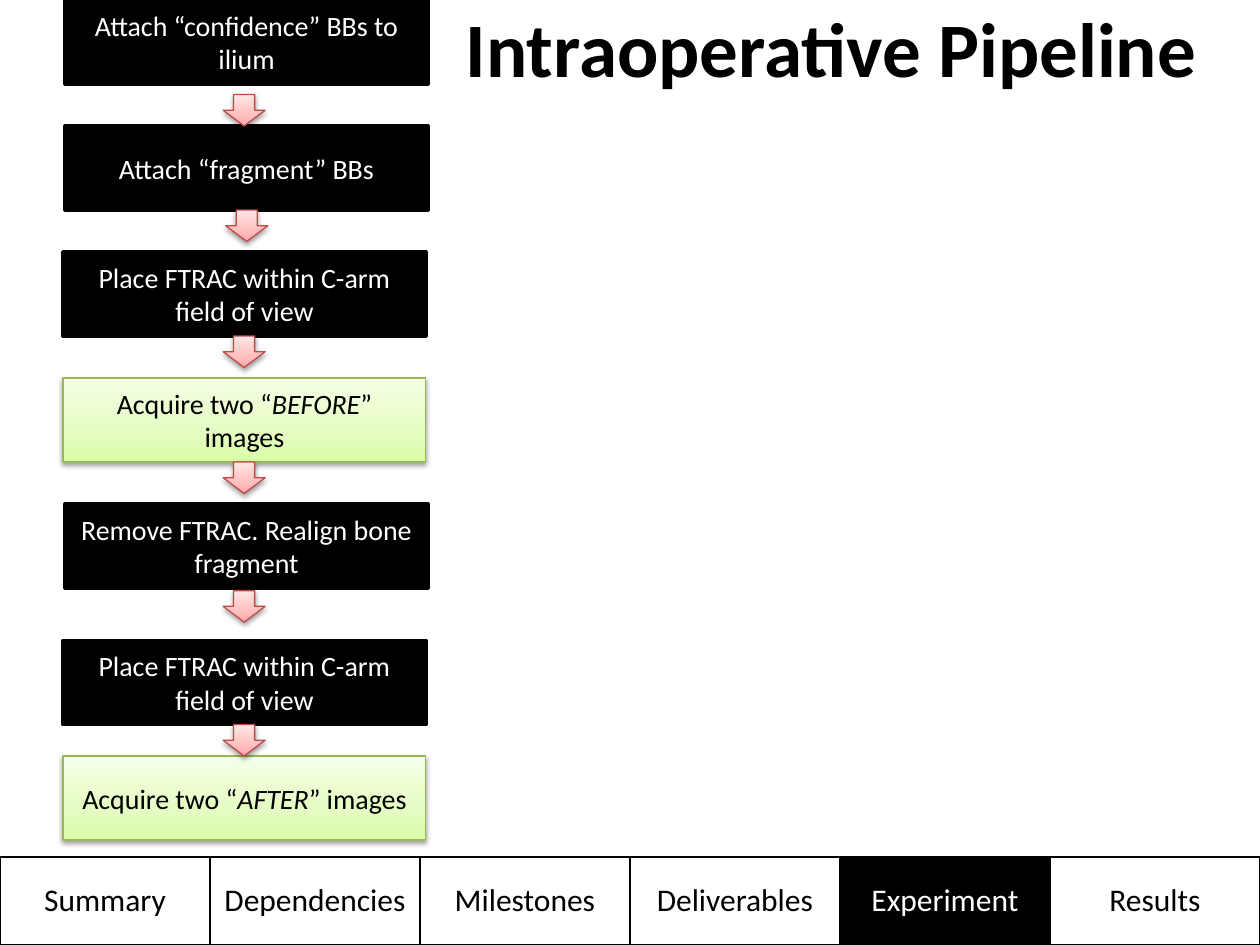
import copy

import pptx
import pptx.dml.color
import pptx.enum.shapes
import pptx.enum.text
import pptx.oxml
import pptx.oxml.ns
import pptx.util
from pptx.util import Pt

RECTANGLE = pptx.enum.shapes.MSO_SHAPE.RECTANGLE
DOWN_ARROW = pptx.enum.shapes.MSO_SHAPE.DOWN_ARROW
MIDDLE = pptx.enum.text.MSO_ANCHOR.MIDDLE
CENTER = pptx.enum.text.PP_ALIGN.CENTER
NAMESPACE = pptx.oxml.ns.nsdecls("a")


class Theme:
    font = "Calibri"
    black, white = "000000", "FFFFFF"
    green = ("DAFDA7", "E4FCC2", "F5FFE7")
    green_line = "98B955"
    red = ("FFA6A5", "FFC0BF", "FFE7E7")
    red_line = "BF4C48"
    stop_positions = (0, 0.35, 1)
    title_size, tab_size, step_size = 44, 18, 16


def rgb(value):
    return pptx.dml.color.RGBColor.from_string(value)


def set_values(target, values):
    for name, value in values.items():
        setattr(target, name, value)


class SlideBuilder:
    def __init__(self, slide, theme):
        self.slide, self.theme = slide, theme

    def add_text(self, frame, runs, size, color, **extra):
        """Fill the first paragraph with (text, font values) runs."""
        paragraph = frame.paragraphs[0]
        paragraph.alignment = CENTER
        for text, values in runs:
            run = paragraph.add_run()
            run.text = text
            set_values(run.font, {"name": self.theme.font, "size": Pt(size), **extra, **values})
            run.font.color.rgb = rgb(color)

    def shape(self, kind, left, top, width, height, fill, line, line_width):
        shape = self.slide.shapes.add_shape(kind, Pt(left), Pt(top), Pt(width), Pt(height))
        shape.shadow.inherit = False
        shape.line.color.rgb = rgb(line)
        shape.line.width = Pt(line_width)
        if isinstance(fill, tuple):
            self.gradient(shape, fill)
            self.shadow(shape)
        else:
            shape.fill.solid()
            shape.fill.fore_color.rgb = rgb(fill)
        return shape

    def gradient(self, shape, colors):
        shape.fill.gradient()
        shape.fill.gradient_angle = 90
        stop_list = shape._element.spPr.find(".//" + pptx.oxml.ns.qn("a:gsLst"))
        stop_list.insert(1, copy.deepcopy(stop_list[0]))
        for stop, position, color in zip(shape.fill.gradient_stops, self.theme.stop_positions, colors):
            stop.position = position
            stop.color.rgb = rgb(color)

    def shadow(self, shape):
        effects = shape._element.spPr.find(pptx.oxml.ns.qn("a:effectLst"))
        effects.append(pptx.oxml.parse_xml(
            f'<a:outerShdw {NAMESPACE} blurRad="{Pt(3.1)}" dist="{Pt(1.6)}" dir="5400000" '
            f'rotWithShape="0"><a:srgbClr val="{self.theme.black}"><a:alpha val="38000"/>'
            '</a:srgbClr></a:outerShdw>'))

    def step(self, left, top, runs, is_image):
        theme = self.theme
        style = (theme.green, theme.green_line, 0.75) if is_image else (theme.black, theme.black, 2)
        box = self.shape(RECTANGLE, left, top, 207.36, 48, *style)
        set_values(box.text_frame, {"word_wrap": True, "vertical_anchor": MIDDLE})
        self.add_text(box.text_frame, runs, theme.step_size, theme.black if is_image else theme.white)

    def arrow(self, left, top):
        self.shape(DOWN_ARROW, left, top, 24, 18, self.theme.red, self.theme.red_line, 0.75)

    def title(self, text, left, top, width, height):
        box = self.slide.shapes.add_textbox(Pt(left), Pt(top), Pt(width), Pt(height))
        box.text_frame.word_wrap = True
        self.add_text(box.text_frame, [(text, {})], self.theme.title_size, self.theme.black, bold=True)

    def tabs(self, names, active, top, width, height):
        theme = self.theme
        table = self.slide.shapes.add_table(1, len(names), 0, Pt(top), Pt(width), Pt(height)).table
        set_values(table, {"first_row": False, "horz_banding": False})
        margins = {f"margin_{side}": Pt(3.6) for side in ("left", "right", "top", "bottom")}
        for cell, name in zip(table.rows[0].cells, names):
            fill, color = (theme.black, theme.white) if name == active else (theme.white, theme.black)
            set_values(cell, {"vertical_anchor": MIDDLE, **margins})
            self.add_text(cell.text_frame, [(name, {})], theme.tab_size, color)
            for side in "LRTB":
                cell._tc.get_or_add_tcPr().append(pptx.oxml.parse_xml(
                    f'<a:ln{side} {NAMESPACE} w="{Pt(1)}"><a:solidFill>'
                    f'<a:srgbClr val="{theme.black}"/></a:solidFill></a:ln{side}>'))
            cell.fill.solid()
            cell.fill.fore_color.rgb = rgb(fill)


def image_runs(moment):
    return [("Acquire two “", {}), (moment, {"italic": True}), ("” images", {})]


def main():
    presentation = pptx.Presentation()
    set_values(presentation, {"slide_width": Pt(720), "slide_height": Pt(540)})
    slide = presentation.slides.add_slide(presentation.slide_layouts[6])
    builder = SlideBuilder(slide, Theme())

    # Navigation tabs
    names = ["Summary", "Dependencies", "Milestones", "Deliverables", "Experiment", "Results"]
    builder.tabs(names, "Experiment", 489.6, 720, 50.4)

    # Pipeline steps: left, top, runs, image step or not
    place = [("Place FTRAC within C-arm field of view", {})]
    steps = [
        (37.2, 0, [("Attach “confidence” BBs to ilium", {})], False),
        (37.2, 72, [("Attach “fragment” BBs", {})], False),
        (36, 144, place, False),
        (36, 216, image_runs("BEFORE"), True),
        (37.2, 288, [("Remove FTRAC. Realign bone fragment", {})], False),
        (36, 366, place, False),
        (36, 432, image_runs("AFTER"), True),
    ]
    for step in steps:
        builder.step(*step)

    # Arrows between the steps
    for left, top in [(127.5, 54), (129, 120), (127.5, 192), (127.5, 264), (127.5, 337.5), (127.5, 414)]:
        builder.arrow(left, top)

    # Title
    builder.title("Intraoperative Pipeline", 151.2, -3, 648, 90)

    presentation.save("out.pptx")


if __name__ == "__main__":
    main()
